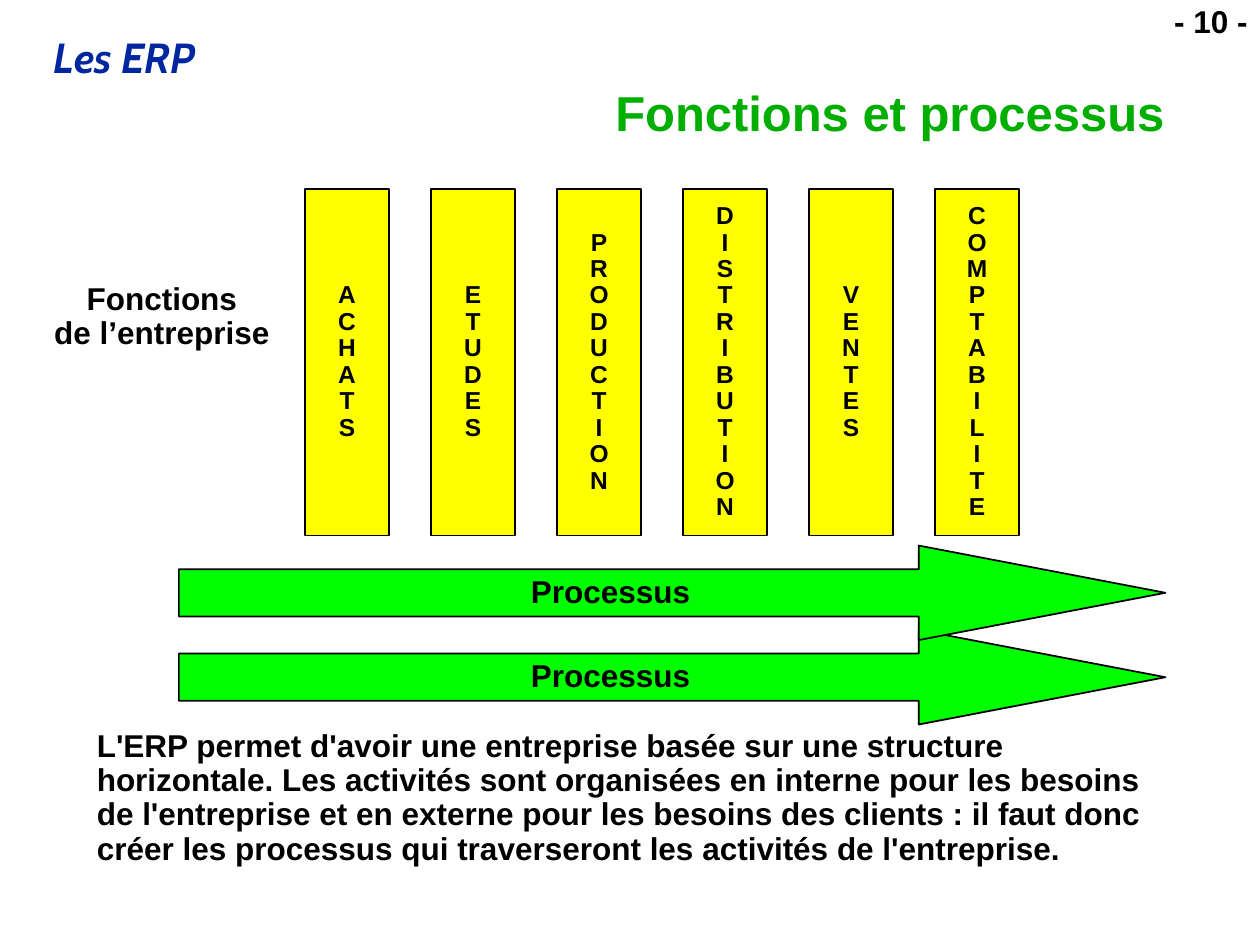
"""Build the slide on company functions and the processes that cross them."""
from dataclasses import dataclass

from pptx import Presentation
from pptx.dml.color import RGBColor
from pptx.enum import shapes, text
from pptx.util import Inches, Pt

LEFT, MID, RIGHT = text.PP_ALIGN.LEFT, text.PP_ALIGN.CENTER, text.PP_ALIGN.RIGHT
TOP, CORE = text.MSO_ANCHOR.TOP, text.MSO_ANCHOR.MIDDLE


@dataclass(frozen=True)
class Theme:
    """Colours, fonts and type sizes of the slide."""
    ink: str = "000000"
    brand: str = "00279F"
    title: str = "00AE00"
    bar: str = "FFFF00"
    arrow: str = "00FF00"
    font: str = "Arial"
    logo: str = "Cabin"
    small: int = 14
    body: int = 18
    head: int = 24
    large: int = 28


T = Theme()


@dataclass(frozen=True)
class Box:
    """Position and size in inches."""
    x: float
    y: float
    w: float
    h: float

    def dims(self) -> tuple:
        """Return the four lengths."""
        return tuple(Inches(n) for n in (self.x, self.y, self.w, self.h))


@dataclass(frozen=True)
class Style:
    """Look of a block of text."""
    size: int = T.body
    color: str = T.ink
    font: str = T.font
    align: text.PP_ALIGN = LEFT
    anchor: text.MSO_ANCHOR = TOP
    wrap: bool = True
    italic: bool = False


@dataclass(frozen=True)
class Label:
    """Free text with its place and style."""
    box: Box
    lines: tuple
    style: Style


LABELS = (
    Label(Box(0.33, 0.25, 8.08, 0.46), ("Les ERP",),
          Style(T.head, T.brand, T.logo, italic=True)),
    Label(Box(9.09, 0, 0.91, 0.37), ("- 10 -",), Style(align=RIGHT)),
    Label(Box(1.42, 0.67, 7.92, 0.5), ("Fonctions et processus",),
          Style(T.large, T.title, align=RIGHT, anchor=CORE)),
    Label(Box(0.67, 5.75, 8.58, 1.18),
          ("L'ERP permet d'avoir une entreprise basée sur une structure "
           "horizontale. Les activités sont organisées en interne pour les "
           "besoins de l'entreprise et en externe pour les besoins des "
           "clients : il faut donc créer les processus qui traverseront les "
           "activités de l'entreprise.",), Style()),
    Label(Box(0.33, 2.2, 1.91, 0.64), ("Fonctions", "de l’entreprise"),
          Style(align=MID, wrap=False)),
)
BARS = ("ACHATS", "ETUDES", "PRODUCTION", "DISTRIBUTION", "VENTES", "COMPTABILITE")
ROWS = (5, 4.33)
BAR = Style(T.small, align=MID, anchor=CORE, wrap=False)
ARROW = Style(align=MID, anchor=CORE, wrap=False)


def write(shape, lines, style: Style) -> None:
    """Fill a shape with one paragraph per line."""
    frame = shape.text_frame
    frame.word_wrap = style.wrap
    frame.vertical_anchor = style.anchor
    frame.text = "\n".join(lines)
    for para in frame.paragraphs:
        para.alignment = style.align
        para.line_spacing = 0.9
        font = para.font
        font.name, font.size = style.font, Pt(style.size)
        font.bold, font.italic = True, style.italic
        font.color.rgb = RGBColor.from_string(style.color)


def label(slide, item: Label) -> None:
    """Add a text box."""
    write(slide.shapes.add_textbox(*item.box.dims()), item.lines, item.style)


def block(slide, kind: shapes.MSO_SHAPE, box: Box, fill: str, lines, style: Style):
    """Add a filled and outlined shape with text."""
    shape = slide.shapes.add_shape(kind, *box.dims())
    shape.shadow.inherit = False
    shape.fill.solid()
    shape.fill.fore_color.rgb = RGBColor.from_string(fill)
    shape.line.color.rgb = RGBColor.from_string(T.ink)
    shape.line.width = Pt(1)
    write(shape, lines, style)
    return shape


def main() -> None:
    """Draw and save the slide."""
    deck = Presentation()
    deck.slide_width, deck.slide_height = Inches(10), Inches(7.5)
    slide = deck.slides.add_slide(deck.slide_layouts[6])
    for item in LABELS:
        label(slide, item)
    for i, name in enumerate(BARS):
        block(slide, shapes.MSO_SHAPE.RECTANGLE, Box(2.42 + i, 1.5, 0.67, 2.75),
              T.bar, name, BAR)
    for y in ROWS:
        arrow = block(slide, shapes.MSO_SHAPE.RIGHT_ARROW, Box(1.42, y, 7.83, 0.75),
                      T.arrow, ("Processus",), ARROW)
        arrow.adjustments[0] = 0.5
        arrow.adjustments[1] = 2.61
    deck.save("out.pptx")


if __name__ == "__main__":
    main()
